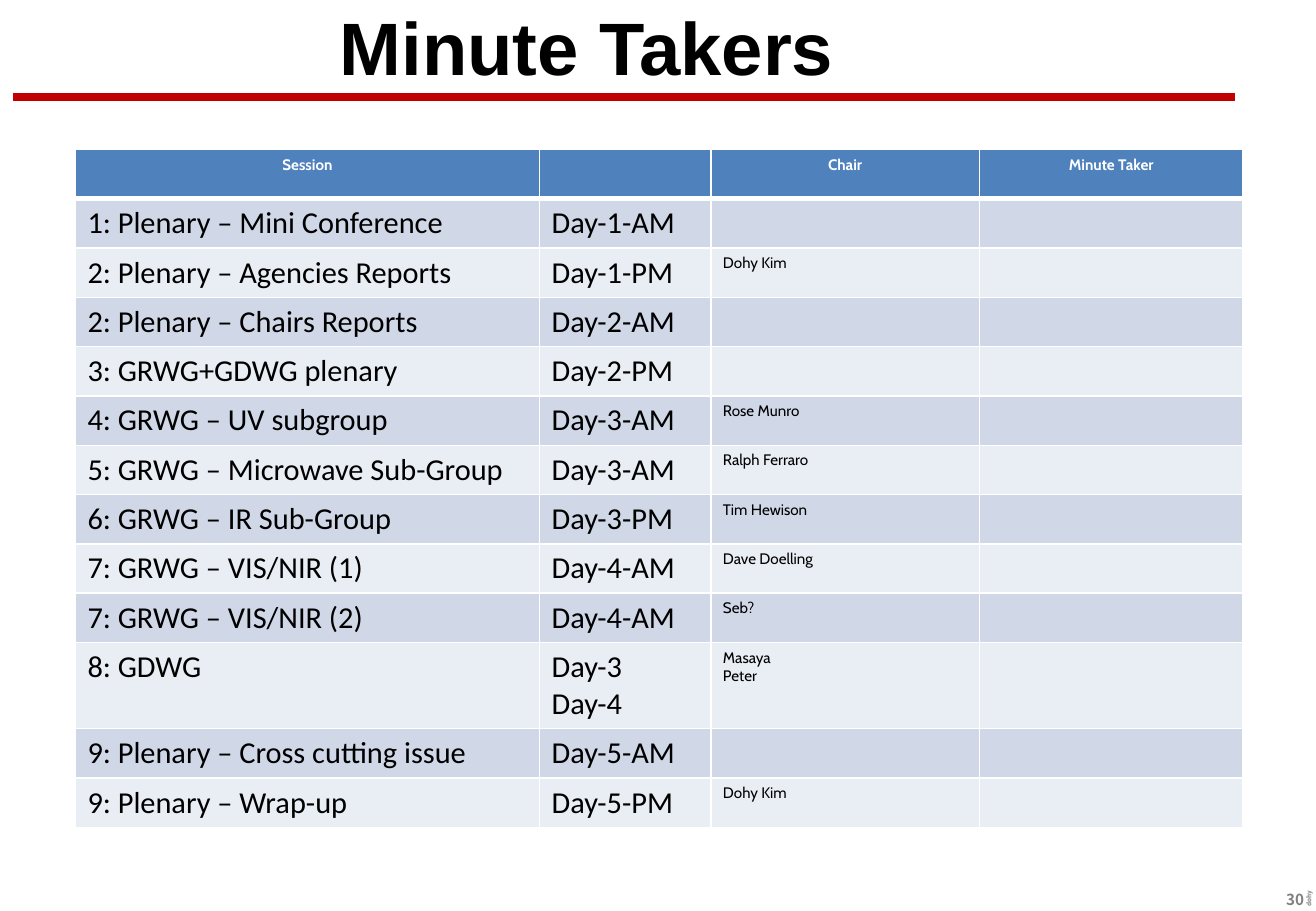
from lxml.etree import SubElement
from pptx import Presentation
from pptx.dml.color import RGBColor
from pptx.enum.shapes import MSO_CONNECTOR
from pptx.enum.text import MSO_ANCHOR, MSO_AUTO_SIZE, PP_ALIGN
from pptx.oxml.ns import qn
from pptx.util import Inches, Pt

COLORS = {"rule": "C00000", "header": "4F81BD", "odd": "D0D8E8", "even": "E9EDF4",
          "white": "FFFFFF", "black": "000000", "gray": "808080"}

COLUMN_WIDTHS = [3.82, 1.41, 2.21, 2.17]
HEADER = ["Session", "", "Chair", "Minute Taker"]
# Session, time and chair; a line break starts a new paragraph
SESSIONS = [
    ("1: Plenary – Mini Conference", "Day-1-AM", ""),
    ("2: Plenary – Agencies Reports", "Day-1-PM", "Dohy Kim"),
    ("2: Plenary – Chairs Reports", "Day-2-AM", ""),
    ("3: GRWG+GDWG plenary", "Day-2-PM", ""),
    ("4: GRWG – UV subgroup", "Day-3-AM", "Rose Munro"),
    ("5: GRWG – Microwave Sub-Group", "Day-3-AM", "Ralph Ferraro"),
    ("6: GRWG – IR Sub-Group", "Day-3-PM", "Tim Hewison"),
    ("7: GRWG – VIS/NIR (1)", "Day-4-AM", "Dave Doelling"),
    ("7: GRWG – VIS/NIR (2)", "Day-4-AM", "Seb?"),
    ("8: GDWG", "Day-3\nDay-4", "Masaya\nPeter"),
    ("9: Plenary – Cross cutting issue", "Day-5-AM", ""),
    ("9: Plenary – Wrap-up", "Day-5-PM", "Dohy Kim"),
]


def color(name):
    return RGBColor.from_string(COLORS[name])


def write_text(text_frame, text, font_name, size, color_name, bold=False, align=PP_ALIGN.LEFT):
    for index, line in enumerate(text.split("\n")):
        paragraph = text_frame.add_paragraph() if index else text_frame.paragraphs[0]
        paragraph.alignment = align
        if not line:
            continue
        run = paragraph.add_run()
        run.text = line
        font = run.font
        font.name, font.size, font.bold = font_name, Pt(size), bold
        font.color.rgb = color(color_name)


def add_heading(slide, left, top, width, height):
    # Title
    title = slide.shapes.title
    title.left, title.top = Inches(left), Inches(top)
    title.width, title.height = Inches(width), Inches(height)
    text_frame = title.text_frame
    text_frame.auto_size = MSO_AUTO_SIZE.NONE
    text_frame.vertical_anchor = MSO_ANCHOR.MIDDLE
    write_text(text_frame, "Minute Takers", "Arial", 44, "black", True, PP_ALIGN.CENTER)

    # Red rule below the title
    rule_left, rule_top = left - 0.05, top + height + 0.12
    rule = slide.shapes.add_connector(
        MSO_CONNECTOR.STRAIGHT, Inches(rule_left), Inches(rule_top),
        Inches(rule_left + 10.05), Inches(rule_top))
    rule.line.color.rgb = color("rule")
    rule.line.width = Pt(4.5)
    SubElement(rule._element.spPr, qn("a:effectLst"))


def set_borders(cell, bottom_width):
    properties = cell._tc.get_or_add_tcPr()
    widths = {"a:lnL": 1, "a:lnR": 1, "a:lnT": 1, "a:lnB": bottom_width}
    for position, (tag, width) in enumerate(widths.items()):
        line = properties.makeelement(qn(tag), {"w": str(Pt(width))})
        fill = SubElement(line, qn("a:solidFill"))
        SubElement(fill, qn("a:srgbClr"), val=COLORS["white"])
        properties.insert(position, line)


def style_cell(cell, fill_name, bottom_width=1):
    cell.fill.solid()
    cell.fill.fore_color.rgb = color(fill_name)
    set_borders(cell, bottom_width)


def add_sessions_table(slide, left, top, width, height):
    row_count = len(SESSIONS) + 1
    table = slide.shapes.add_table(
        row_count, len(COLUMN_WIDTHS), Inches(left), Inches(top),
        Inches(width), Inches(height)).table
    for column, column_width in zip(table.columns, COLUMN_WIDTHS):
        column.width = Inches(column_width)

    # Header row
    for index, label in enumerate(HEADER):
        cell = table.cell(0, index)
        write_text(cell.text_frame, label, "Cabin", 9, "white", True, PP_ALIGN.CENTER)
        style_cell(cell, "header", 3)

    # Session rows in alternating bands; the minute taker is still open
    for row, session in enumerate(SESSIONS, 1):
        for index, text in enumerate((*session, "")):
            cell = table.cell(row, index)
            font_name, size = ("Calibri", 18) if index < 2 else ("Cabin", 9)
            write_text(cell.text_frame, text, font_name, size, "black")
            style_cell(cell, "odd" if row % 2 else "even")


def add_footer_text(slide, text, size, box, align, rotation=0):
    text_box = slide.shapes.add_textbox(*map(Inches, box))
    text_box.rotation = rotation
    text_box.text_frame.word_wrap = True
    write_text(text_box.text_frame, text, "Noto Sans CJK KR", size, "gray", True, align)
    return text_box


def add_footer(slide, left, top, width, height):
    # Page number
    number = add_footer_text(slide, "30", 9, (left, top, width, height), PP_ALIGN.RIGHT)
    number.text_frame.vertical_anchor = MSO_ANCHOR.MIDDLE
    # Sideways author mark
    add_footer_text(slide, "dohy", 3.8, (left + 0.3, top - 0.37, 1.14, 0.16),
                    PP_ALIGN.LEFT, 270)


def main():
    presentation = Presentation()
    presentation.slide_width, presentation.slide_height = Inches(10.83), Inches(7.5)
    slide = presentation.slides.add_slide(presentation.slide_layouts[5])
    add_heading(slide, 0.16, 0.08, 9.34, 0.6)
    add_sessions_table(slide, 0.62, 1.23, 9.61, 5.28)
    add_footer(slide, 9.9, 7.28, 0.93, 0.25)
    presentation.save("out.pptx")


if __name__ == "__main__":
    main()
